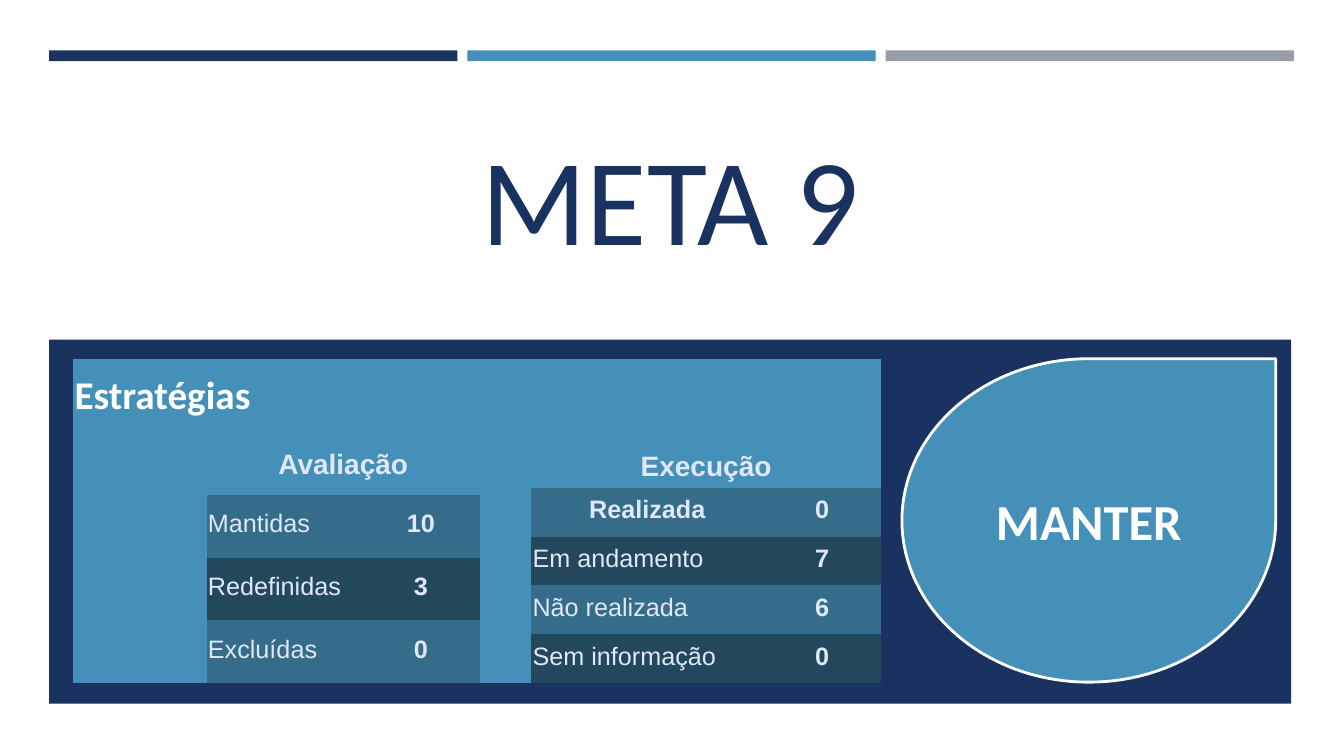
from pptx import Presentation
from pptx.dml.color import RGBColor
from pptx.enum.shapes import MSO_SHAPE
from pptx.enum.text import MSO_ANCHOR, PP_ALIGN
from pptx.oxml.ns import qn
from pptx.util import Cm, Pt

RECT, TEARDROP = MSO_SHAPE.RECTANGLE, MSO_SHAPE.TEAR
LEFT, CENTER = PP_ALIGN.LEFT, PP_ALIGN.CENTER
MIDDLE, BOTTOM = MSO_ANCHOR.MIDDLE, MSO_ANCHOR.BOTTOM
NAVY = RGBColor(0x1A, 0x32, 0x60)
BLUE = RGBColor(0x45, 0x90, 0xB8)
GRAY = RGBColor(0x96, 0x9F, 0xA7)
WHITE = RGBColor(0xFF, 0xFF, 0xFF)
PALE = RGBColor(0xE0, 0xE8, 0xF7)
BANDS = RGBColor(0x34, 0x6C, 0x8A), RGBColor(0x23, 0x48, 0x5C)
NO_STYLE = "{2D5ABB26-0587-4C30-8999-92F81FD0307C}"


class Deck:
    """Slide builder that holds the fonts and the current slide."""

    heading_font = "Calibri"
    table_font = "Arial"

    def __init__(self):
        self.prs = Presentation()
        self.prs.slide_width, self.prs.slide_height = Cm(33.87), Cm(19.05)
        self.slide = self.prs.slides.add_slide(self.prs.slide_layouts[6])

    def set_text(self, tf, text, size, color, font, bold=False, align=CENTER):
        tf.text = text
        p = tf.paragraphs[0]
        p.alignment = align
        f = p.runs[0].font
        f.size, f.name, f.bold = Pt(size), font, bold
        f.color.rgb = color

    def shape(self, kind, x, y, w, h, fill, line=None):
        sp = self.slide.shapes.add_shape(kind, Cm(x), Cm(y), Cm(w), Cm(h))
        sp.shadow.inherit = False
        sp.fill.solid()
        sp.fill.fore_color.rgb = fill
        if line is None:
            sp.line.fill.background()
        else:
            sp.line.color.rgb = line
            sp.line.width = Pt(2)
        return sp

    def title(self, text, x, y, w, h):
        tf = self.slide.shapes.add_textbox(Cm(x), Cm(y), Cm(w), Cm(h)).text_frame
        tf.word_wrap = True
        tf.vertical_anchor = BOTTOM
        self.set_text(tf, text, 88, NAVY, self.heading_font)

    def label(self, cell, text, size=18, color=PALE, font=table_font,
              bold=True, align=CENTER, anchor=MIDDLE):
        cell.vertical_anchor = anchor
        self.set_text(cell.text_frame, text, size, color, font, bold, align)

    def table(self, x, y, widths, heights, merges, records):
        frame = self.slide.shapes.add_table(
            len(heights), len(widths), Cm(x), Cm(y), Cm(sum(widths)), Cm(sum(heights)))
        tbl = frame.table
        tbl.first_row = tbl.horz_banding = False
        tbl._tbl.tblPr.find(qn("a:tableStyleId")).text = NO_STYLE
        for col, w in zip(tbl.columns, widths):
            col.width = Cm(w)
        for row, h in zip(tbl.rows, heights):
            row.height = Cm(h)
        for cell in tbl.iter_cells():
            cell.margin_left = cell.margin_right = cell.margin_top = Cm(0.03)
            cell.margin_bottom = Cm(0.13)
            cell.fill.solid()
            cell.fill.fore_color.rgb = BLUE
        for start, end in merges:
            tbl.cell(*start).merge(tbl.cell(*end))
        name_col = len(widths) - 2
        for i, (name, count) in enumerate(records):
            name_cell, count_cell = (tbl.cell(i + 2, name_col + k) for k in (0, 1))
            for cell in (name_cell, count_cell):
                cell.fill.fore_color.rgb = BANDS[i % 2]
            self.label(name_cell, name, bold=False, align=LEFT)
            self.label(count_cell, str(count))
        return tbl


def main():
    deck = Deck()
    for i, color in enumerate((NAVY, BLUE, GRAY)):
        deck.shape(RECT, 1.24 + 10.54 * i, 1.27, 10.29, 0.27, color)
    deck.shape(RECT, 1.24, 8.56, 31.3, 9.17, NAVY)
    deck.title("META 9", 1.63, 2.84, 30.53, 4.09)

    review = deck.table(
        1.85, 9.04, (1.12, 2.24, 3.91, 2.97), (2.01, 1.42) + (1.58,) * 3,
        [((0, 0), (0, 2)), ((1, 2), (1, 3))],
        [("Mantidas", 10), ("Redefinidas", 3), ("Excluídas", 0)])
    deck.label(review.cell(0, 0), "Estratégias", 28, WHITE, deck.heading_font, align=LEFT)
    deck.label(review.cell(1, 2), "Avaliação", 20)

    progress = deck.table(
        12.09, 9.04, (1.3, 5.84, 2.97), (2.13, 1.12) + (1.23,) * 4,
        [((0, 0), (0, 1)), ((1, 1), (1, 2))],
        [("Realizada", 0), ("Em andamento", 7), ("Não realizada", 6), ("Sem informação", 0)])
    deck.label(progress.cell(1, 1), "Execução", 20, anchor=BOTTOM)
    deck.label(progress.cell(2, 1), "Realizada")

    sp = deck.shape(TEARDROP, 22.73, 9.04, 9.42, 8.15, BLUE, WHITE)
    sp.text_frame.vertical_anchor = MIDDLE
    deck.set_text(sp.text_frame, "MANTER", 36, WHITE, deck.heading_font, bold=True)
    deck.prs.save("out.pptx")


if __name__ == "__main__":
    main()
